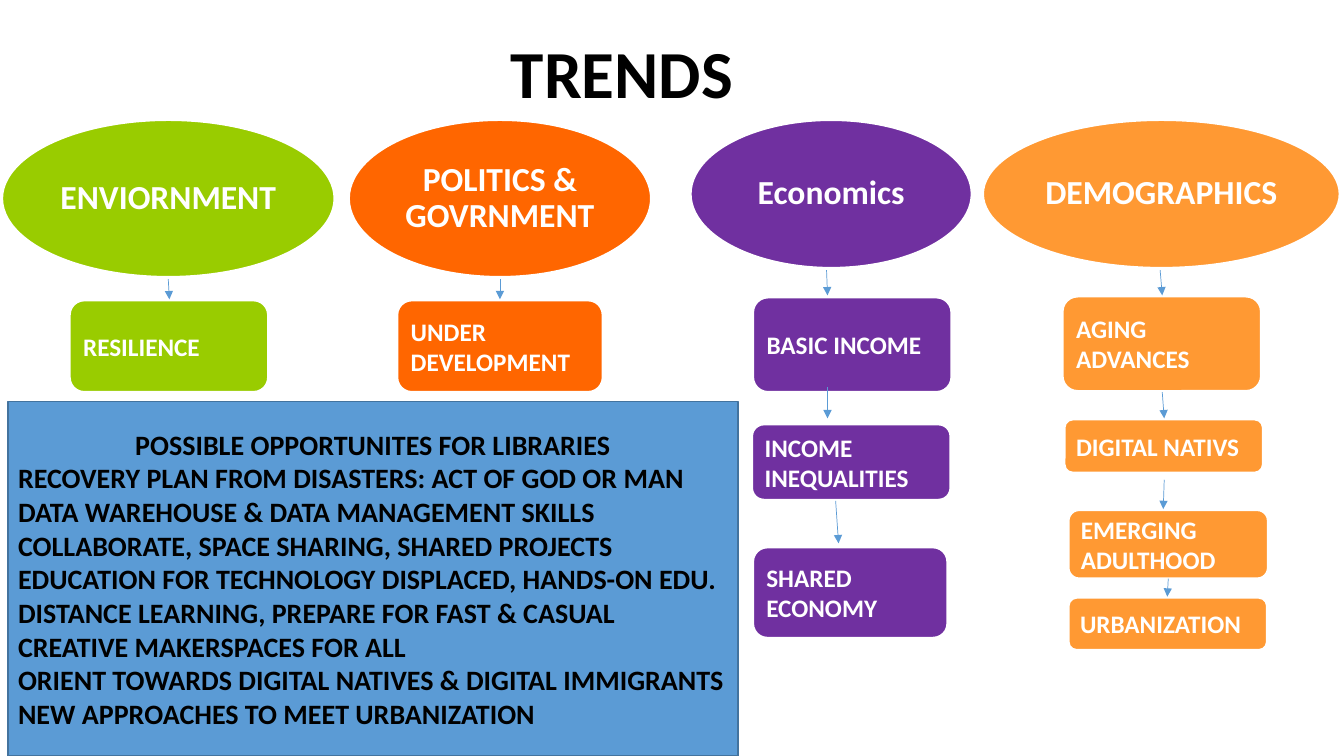
from lxml import etree
from pptx import Presentation
from pptx.dml.color import RGBColor
from pptx.enum.shapes import MSO_CONNECTOR, MSO_SHAPE
from pptx.enum.text import MSO_ANCHOR, PP_ALIGN
from pptx.oxml.ns import qn
from pptx.util import Pt

# Each trend: colour, (heading, box), [(text, box)], [arrow start and end]
TRENDS = [
    ("99CC00", ("ENVIORNMENT", (0, 84.2, 240.5, 115.2)),
     [("RESILIENCE", (49, 213.8, 143.3, 67))],
     [(120.2, 199.4, 121, 213.8)]),
    ("FF6600", ("POLITICS & GOVRNMENT", (247.7, 84.2, 218.9, 115.2)),
     [("UNDER DEVELOPMENT", (283, 213.8, 148.3, 67))],
     [(357.1, 199.4, 357.1, 213.8)]),
    ("7030A0", ("Economics", (491.8, 84.2, 203.8, 108.7)),
     [("BASIC INCOME", (537.1, 211.7, 143.3, 69.1)),
      ("INCOME INEQUALITIES", (536.4, 302.4, 143.3, 55.4)),
      ("SHARED ECONOMY", (537.1, 390.2, 140.4, 66.2))],
     [(590.4, 193, 591.1, 211),
      (591.1, 276.5, 591.1, 298.8),
      (596.9, 357.8, 599, 388.1)]),
    ("FF9933", ("DEMOGRAPHICS", (700.6, 84.2, 257.8, 108.7)),
     [("AGING ADVANCES", (758.2, 211, 143.3, 69.1)),
      ("DIGITAL NATIVS", (759.6, 298.8, 143.3, 39.6)),
      ("EMERGING ADULTHOOD", (762.5, 363.6, 144, 50.4)),
      ("URBANIZATION", (762.5, 426.2, 143.3, 38.9))],
     [(828.7, 193, 830.2, 211),
      (830.2, 280.1, 831.6, 298.8),
      (831.6, 342.7, 830.9, 363.6),
      (834.5, 413.3, 833.8, 426.2)]),
]

OPPORTUNITIES = [
    "RECOVERY PLAN FROM DISASTERS: ACT OF GOD OR MAN",
    "DATA WAREHOUSE & DATA MANAGEMENT SKILLS",
    "COLLABORATE, SPACE SHARING, SHARED PROJECTS",
    "EDUCATION FOR TECHNOLOGY DISPLACED, HANDS-ON EDU.",
    "DISTANCE LEARNING, PREPARE FOR FAST & CASUAL",
    "CREATIVE MAKERSPACES FOR ALL",
    "ORIENT TOWARDS DIGITAL NATIVES & DIGITAL IMMIGRANTS",
    "NEW APPROACHES TO MEET URBANIZATION",
]


def rgb(color):
    return RGBColor.from_string(color)


def write(p, text, size, color="FFFFFF", align=PP_ALIGN.LEFT,
          line_spacing=None, before=None):
    p.alignment = align
    if line_spacing:
        p.line_spacing = line_spacing
    if before:
        p.space_before = Pt(before)
    r = p.add_run()
    r.text = text
    r.font.name = "Calibri"
    r.font.size = Pt(size)
    r.font.bold = True
    r.font.color.rgb = rgb(color)


def add_block(slide, kind, box, fill, line=None, line_width=1,
              anchor=MSO_ANCHOR.MIDDLE):
    """Add a filled shape and return its text frame."""
    sp = slide.shapes.add_shape(kind, *map(Pt, box))
    sp.shadow.inherit = False
    sp.fill.solid()
    sp.fill.fore_color.rgb = rgb(fill)
    if line:
        sp.line.color.rgb = rgb(line)
        sp.line.width = Pt(line_width)
    else:
        sp.line.fill.background()
    tf = sp.text_frame
    tf.word_wrap = True
    tf.vertical_anchor = anchor
    return tf


def add_arrow(slide, ends):
    cn = slide.shapes.add_connector(MSO_CONNECTOR.STRAIGHT, *map(Pt, ends))
    cn.line.color.rgb = rgb("5B9BD5")
    cn.line.width = Pt(0.5)
    ln = cn.line._get_or_add_ln()
    etree.SubElement(ln, qn("a:tailEnd"), type="triangle")
    etree.SubElement(cn._element.spPr, qn("a:effectLst"))


def add_trend(slide, color, heading, topics, arrows):
    text, box = heading
    tf = add_block(slide, MSO_SHAPE.OVAL, box, color, "FFFFFF", 4.5)
    write(tf.paragraphs[0], text, 24, align=PP_ALIGN.CENTER,
          line_spacing=0.9, before=10)
    for text, box in topics:
        tf = add_block(slide, MSO_SHAPE.ROUNDED_RECTANGLE, box, color,
                       "FFFFFF", 3)
        write(tf.paragraphs[0], text, 18)
    for ends in arrows:
        add_arrow(slide, ends)


def add_opportunities(slide):
    tf = add_block(slide, MSO_SHAPE.RECTANGLE, (5.8, 286.6, 521.3, 253.4),
                   "5B9BD5", "43739E")
    write(tf.paragraphs[0], "POSSIBLE OPPORTUNITES FOR LIBRARIES", 20,
          color="000000", align=PP_ALIGN.CENTER)
    for text in OPPORTUNITIES:
        write(tf.add_paragraph(), text, 20, color="000000")


def main():
    prs = Presentation()
    prs.slide_width, prs.slide_height = Pt(960), Pt(540)
    slide = prs.slides.add_slide(prs.slide_layouts[6])
    tf = add_block(slide, MSO_SHAPE.RECTANGLE, (38.2, 18.7, 812.2, 65.5),
                   "FFFFFF", anchor=MSO_ANCHOR.TOP)
    write(tf.paragraphs[0], "TRENDS", 48, color="000000",
          align=PP_ALIGN.CENTER)
    for trend in TRENDS:
        add_trend(slide, *trend)
    add_opportunities(slide)
    prs.save("out.pptx")


if __name__ == "__main__":
    main()
